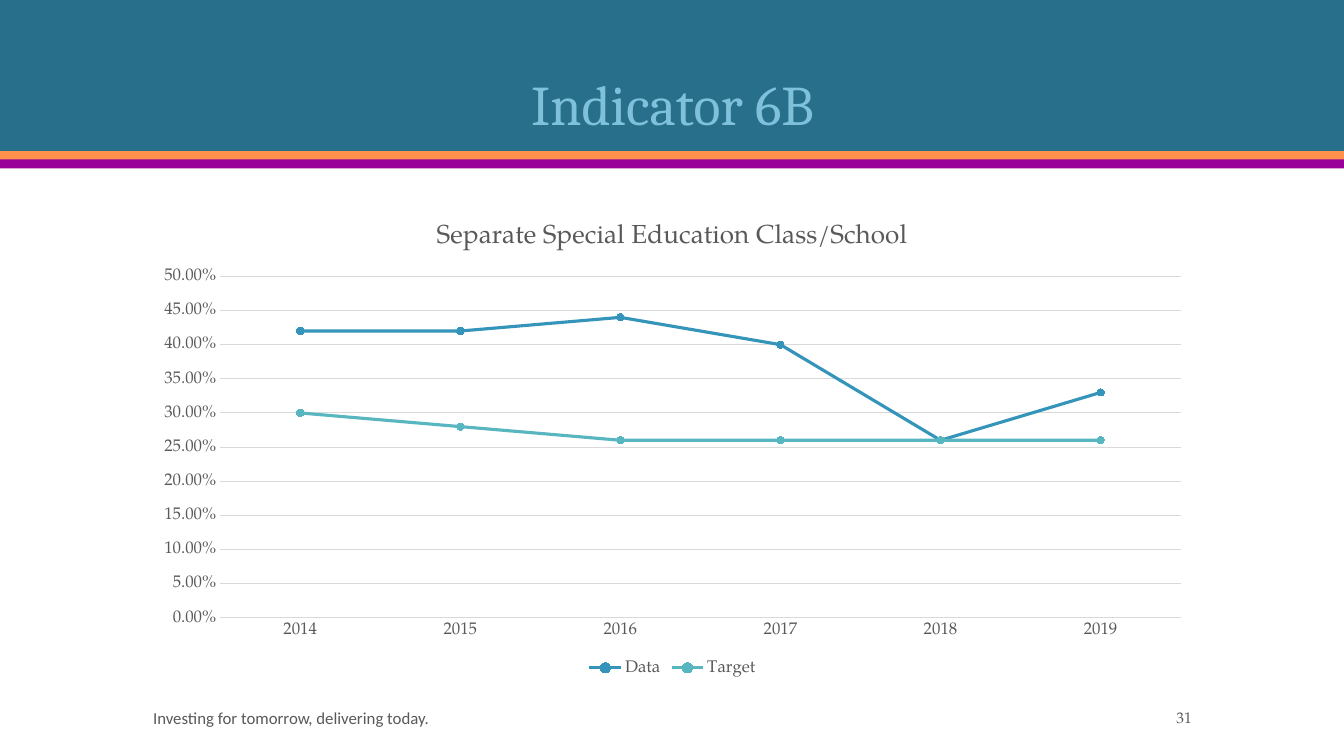
import pptx
import pptx.util
import pptx.dml.color
import pptx.chart.data
import pptx.enum.chart
import pptx.enum.shapes
import pptx.enum.text
from dataclasses import dataclass

Inches, Pt = pptx.util.Inches, pptx.util.Pt
Align, Anchor = pptx.enum.text.PP_ALIGN, pptx.enum.text.MSO_ANCHOR
Kinds = pptx.enum.chart
WIDE, HIGH = 13.33, 7.5
LEFT, SPAN = 1.42, 10.5


@dataclass(frozen=True)
class Theme:
    band: str = "276F8B"
    orange: str = "FF914D"
    purple: str = "990099"
    title: str = "7FC1DB"
    grey: str = "595959"
    grid: str = "D9D9D9"
    lines: tuple = ("3494BA", "58B6C0")
    head: str = "Cambria"
    body: str = "TeX Gyre Pagella"
    foot: str = "Calibri"
    big: int = 40
    mid: float = 18.6
    small: int = 12
    page: int = 11


THEME = Theme()


def tint(code):
    return pptx.dml.color.RGBColor.from_string(code)


def style(font, name, size, color):
    font.name, font.size, font.bold = name, Pt(size), False
    font.color.rgb = tint(color)


def bar(slide, box, color):
    shape = slide.shapes.add_shape(
        pptx.enum.shapes.MSO_SHAPE.RECTANGLE, *map(Inches, box))
    shape.shadow.inherit = False
    shape.fill.solid()
    shape.fill.fore_color.rgb = tint(color)
    shape.line.fill.background()


def label(slide, box, text, name, size, color, align, anchor):
    frame = slide.shapes.add_textbox(*map(Inches, box)).text_frame
    frame.word_wrap = True
    frame.vertical_anchor = anchor
    para = frame.paragraphs[0]
    para.alignment = align
    run = para.add_run()
    run.text = text
    style(run.font, name, size, color)
    return para


def header(slide, box):
    x, y, w, h = box
    thin = 0.09
    # Band with two stripes below it
    bar(slide, (x, y, w, h), THEME.band)
    bar(slide, (x, y + h, w, thin), THEME.orange)
    bar(slide, (x, y + h + thin - 0.01, w, thin), THEME.purple)
    # Title, set on the foot of the band
    para = label(slide, (x + LEFT, y + 0.28, SPAN, h - 0.37), "Indicator 6B",
                 THEME.head, THEME.big, THEME.title,
                 Align.CENTER, Anchor.BOTTOM)
    para.line_spacing = 0.9


def trend(slide, box):
    data = pptx.chart.data.CategoryChartData(number_format="0.00%")
    data.categories = [str(year) for year in range(2014, 2020)]
    data.add_series("Data", (0.42, 0.42, 0.44, 0.4, 0.26, 0.33))
    data.add_series("Target", (0.3, 0.28, 0.26, 0.26, 0.26, 0.26))
    chart = slide.shapes.add_chart(
        Kinds.XL_CHART_TYPE.LINE_MARKERS, *map(Inches, box), data).chart
    style(chart.font, THEME.body, THEME.small, THEME.grey)

    # Heading and legend
    chart.has_title = True
    run = chart.chart_title.text_frame.paragraphs[0].add_run()
    run.text = "Separate Special Education Class/School"
    style(run.font, THEME.body, THEME.mid, THEME.grey)
    chart.chart_title.include_in_layout = False
    chart.has_legend = True
    chart.legend.position = Kinds.XL_LEGEND_POSITION.BOTTOM
    chart.legend.include_in_layout = False
    style(chart.legend.font, THEME.body, THEME.small, THEME.grey)

    # Axes
    years, rates = chart.category_axis, chart.value_axis
    for axis in (years, rates):
        axis.major_tick_mark = Kinds.XL_TICK_MARK.NONE
        axis.minor_tick_mark = Kinds.XL_TICK_MARK.NONE
        style(axis.tick_labels.font, THEME.body, THEME.small, THEME.grey)
    rates.minimum_scale, rates.maximum_scale = 0, 0.5
    rates.major_unit = 0.05
    rates.tick_labels.number_format = "0.00%"
    rates.tick_labels.number_format_is_linked = False
    rates.format.line.fill.background()
    for line in (years.format.line, rates.major_gridlines.format.line):
        line.color.rgb = tint(THEME.grid)
        line.width = Pt(0.75)

    # Series
    plot = chart.plots[0]
    plot.vary_by_categories = False
    for series, code in zip(plot.series, THEME.lines):
        series.smooth = False
        series.format.line.color.rgb = tint(code)
        series.format.line.width = Pt(2.25)
        mark = series.marker
        mark.style = Kinds.XL_MARKER_STYLE.CIRCLE
        mark.size = 5
        mark.format.fill.solid()
        mark.format.fill.fore_color.rgb = tint(code)
        mark.format.line.color.rgb = tint(code)


def footer(slide, box):
    x, y, w, h = box
    side = w / 7
    label(slide, (x, y, w * 0.65, h),
          "Investing for tomorrow, delivering today.",
          THEME.foot, THEME.small, THEME.grey, Align.LEFT, Anchor.MIDDLE)
    label(slide, (x + w - side, y, side, h), "31",
          THEME.body, THEME.page, THEME.grey, Align.RIGHT, Anchor.MIDDLE)


def main():
    deck = pptx.Presentation()
    deck.slide_width, deck.slide_height = Inches(WIDE), Inches(HIGH)
    slide = deck.slides.add_slide(deck.slide_layouts[6])
    header(slide, (0, 0, WIDE, HIGH / 5))
    trend(slide, (LEFT, 2, SPAN, 4.75))
    footer(slide, (LEFT, 6.97, SPAN, 0.3))
    deck.save("out.pptx")


if __name__ == "__main__":
    main()
